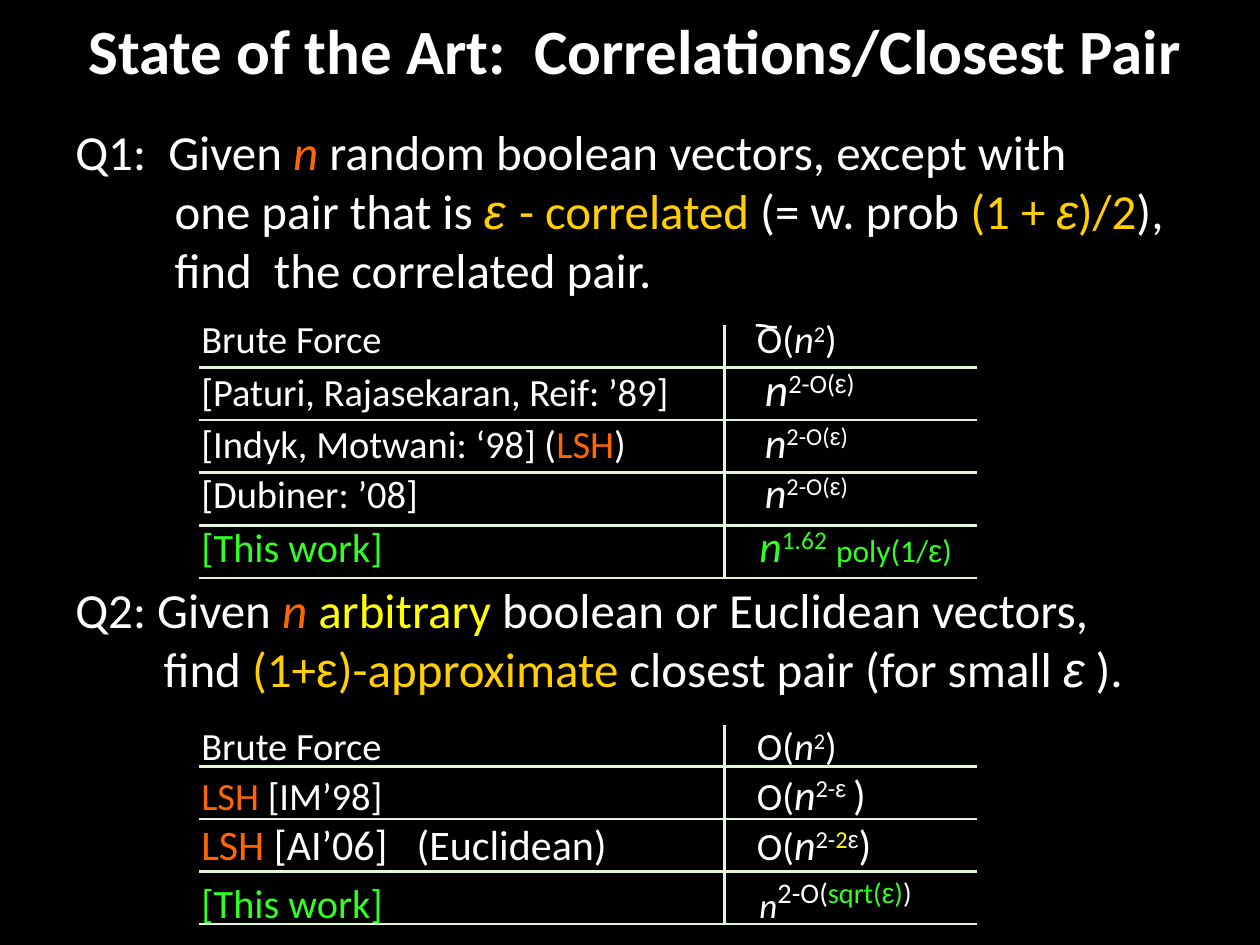
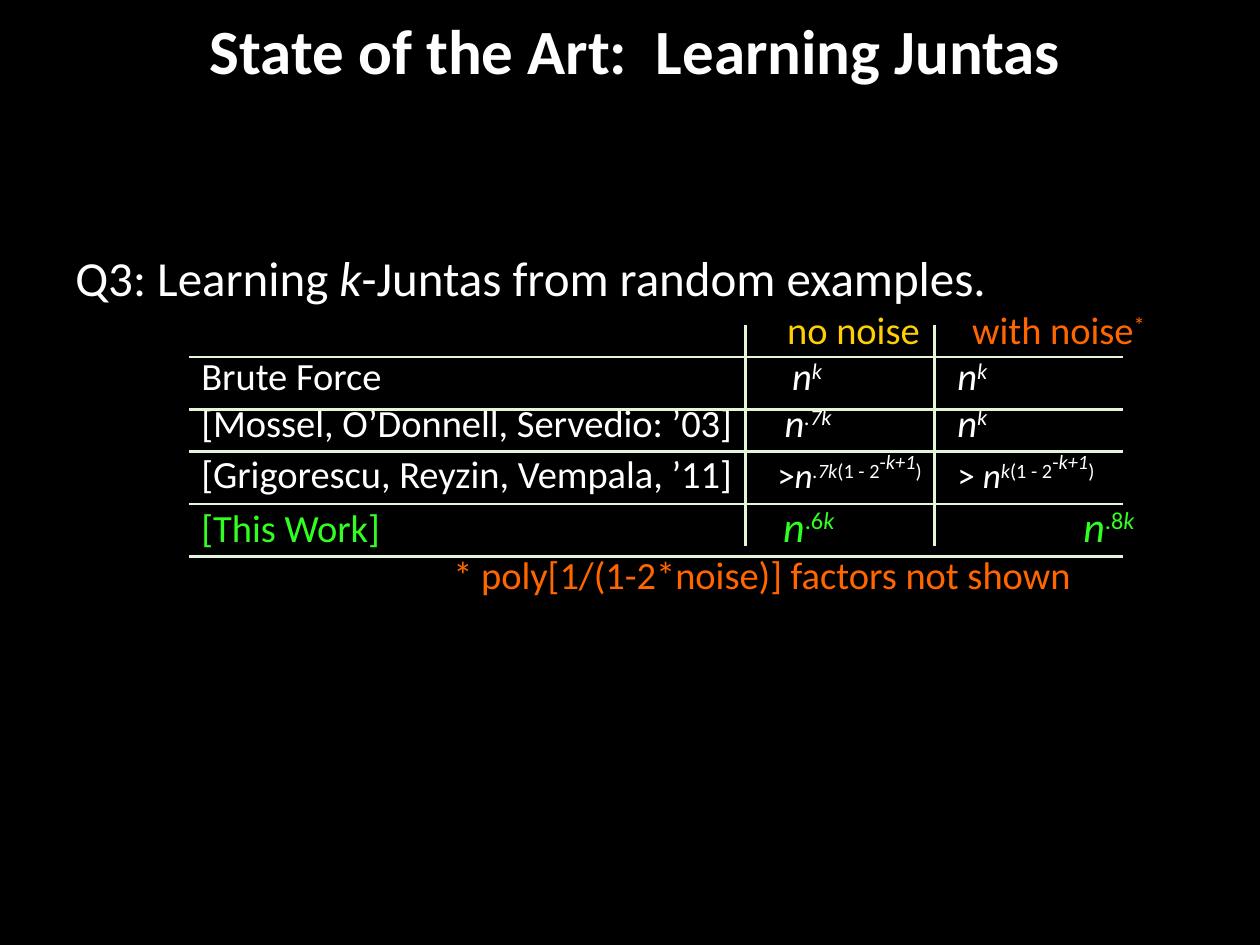
from dataclasses import dataclass, replace
from typing import NamedTuple

from lxml.etree import SubElement
from pptx import Presentation
from pptx.dml.color import RGBColor
from pptx.enum.shapes import MSO_CONNECTOR
from pptx.enum.text import MSO_AUTO_SIZE, PP_ALIGN
from pptx.oxml.ns import qn
from pptx.util import Cm, Pt

COLORS = {
    "background": "000000",
    "white": "FFFFFF",
    "orange": "FF6600",
    "gold": "FFCF03",
    "yellow": "FFFF00",
    "green": "31FF21",
    "rule": "E5F6D8",
}
BODY_FONT, GREEK_FONT = "Calibri", "Arial"
LABEL_TAB = 2.54
QUESTION_SIZE, ROW_SIZE = 28, 22


@dataclass(frozen=True)
class Run:
    text: str
    size: float = ROW_SIZE
    color: str = "white"
    italic: bool = False
    bold: bool = False
    font: str = BODY_FONT
    raised: int = 0  # superscript height in percent


@dataclass(frozen=True)
class Line:
    runs: list[Run]
    indent: float = 0
    space_before: float = 0
    tabs: tuple[float, ...] = ()
    centered: bool = False


class Box(NamedTuple):
    left: float
    top: float
    width: float
    height: float


class Cell(NamedTuple):
    tab: float
    runs: list[Run]


class Grid(NamedTuple):
    left: float
    right: float
    top: float
    bottom: float
    columns: list[float]
    rows: list[float]


TITLE_BOX = Box(0.64, 0.1, 24.33, 1.8)
BODY_LEFT, BODY_TOP, BODY_WIDTH = 1.27, 2.33, 23.5
ROW_STEP = 1.06


# Text pieces
def question(text: str, color: str = "white", italic: bool = False) -> Run:
    return Run(text, QUESTION_SIZE, color, italic)


def variable(text: str, size: float = ROW_SIZE, color: str = "white") -> Run:
    return Run(text, size, color, italic=True)


def power(text: str, size: float = ROW_SIZE, color: str = "white",
          italic: bool = False, raised: int = 30) -> Run:
    return Run(text, size, color, italic, raised=raised)


def greek(run: Run) -> Run:
    return replace(run, font=GREEK_FONT)


def power_of_two_minus(size: float) -> list[Run]:
    return [power("2-O(", size), greek(power("ε", size)), power(")", size)]


def junta_power(base: str, exponent: str) -> list[Run]:
    return [Run(base, 20), variable("n", 20), power(exponent, 20, italic=True),
            power("(1 - 2", 20), power("-", 20, raised=56),
            power("k+1", 20, italic=True, raised=56), power(")", 20)]


def table_row(label: list[Run], *cells: Cell, lead: float = ROW_SIZE,
              space_before: float = 0) -> Line:
    runs = [Run("\t", lead), *label]
    for cell in cells:
        runs += [Run("\t"), *cell.runs]
    tabs = (LABEL_TAB, *(cell.tab for cell in cells))
    return Line(runs, space_before=space_before, tabs=tabs)


# Drawing
def add_line(text_frame, line: Line, first: bool) -> None:
    paragraph = text_frame.paragraphs[0] if first else text_frame.add_paragraph()
    paragraph.alignment = PP_ALIGN.CENTER if line.centered else PP_ALIGN.LEFT
    paragraph.space_before = Pt(line.space_before)
    properties = paragraph._p.get_or_add_pPr()
    if line.indent:
        properties.set("marL", str(Cm(line.indent)))
    if line.tabs:
        tab_list = SubElement(properties, qn("a:tabLst"))
        for position in line.tabs:
            SubElement(tab_list, qn("a:tab"), pos=str(Cm(position)), algn="l")
    for piece in line.runs:
        run = paragraph.add_run()
        run.text = piece.text
        formats = {"name": piece.font, "size": Pt(piece.size),
                   "bold": piece.bold, "italic": piece.italic}
        for name, value in formats.items():
            setattr(run.font, name, value)
        run.font.color.rgb = RGBColor.from_string(COLORS[piece.color])
        if piece.raised:
            run._r.get_or_add_rPr().set("baseline", str(piece.raised * 1000))


def add_text(slide, box: Box, lines: list[Line], inset_top: float = 0.13) -> None:
    shape = slide.shapes.add_textbox(*(Cm(length) for length in box))
    formats = {"word_wrap": True, "auto_size": MSO_AUTO_SIZE.SHAPE_TO_FIT_TEXT,
               "margin_top": Cm(inset_top)}
    for name, value in formats.items():
        setattr(shape.text_frame, name, value)
    for index, line in enumerate(lines):
        add_line(shape.text_frame, line, index == 0)


def add_rule(slide, start: tuple[float, float], end: tuple[float, float],
             color: str = "rule", kind=MSO_CONNECTOR.STRAIGHT) -> None:
    points = (Cm(length) for length in (*start, *end))
    connector = slide.shapes.add_connector(kind, *points)
    connector.line.width = Pt(1.5)
    connector.line.color.rgb = RGBColor.from_string(COLORS[color])
    SubElement(connector._element.spPr, qn("a:effectLst"))


def add_grid(slide, grid: Grid) -> None:
    for x in grid.columns:
        add_rule(slide, (x, grid.top), (x, grid.bottom))
    for y in grid.rows:
        add_rule(slide, (grid.left, y), (grid.right, y))


def add_titled_slide(presentation, title: str):
    slide = presentation.slides.add_slide(presentation.slide_layouts[6])
    slide.background.fill.solid()
    slide.background.fill.fore_color.rgb = RGBColor.from_string(COLORS["background"])
    add_text(slide, TITLE_BOX, [Line([Run(title, 36, bold=True)], centered=True)])
    return slide


# Slide 1: closest pair
def build_closest_pair(presentation) -> None:
    slide = add_titled_slide(presentation, "State of the Art:  Correlations/Closest Pair")
    epsilon = greek(question("ε", "gold", italic=True))
    big_o, plain_n = 13.74, 13.9
    quadratic = Cell(big_o, [Run("O("), variable("n"), power("2"), Run(")")])
    lines = [
        Line([question("Q1:  Given "), question("n", "orange", True),
              question(" random boolean vectors, except with")]),
        Line([question("one pair that is "), replace(epsilon, text="ε "),
              question("- correlated", "gold"), question(" (= w. prob "),
              question("(1 + ", "gold"), epsilon, question(")/2", "gold"),
              question("),")], indent=2.0),
        Line([question("find  the correlated pair.")], indent=2.0),
        # First table
        table_row([Run("Brute Force")], quadratic, space_before=9.6),
        table_row([Run("[Paturi, Rajasekaran, Reif: ’89]")],
                  Cell(plain_n, [variable("n", 26), *power_of_two_minus(26)])),
        table_row([Run("[Indyk, Motwani: ‘98] ("), Run("LSH", color="orange"), Run(")")],
                  Cell(plain_n, [variable("n", 24), *power_of_two_minus(24)])),
        table_row([Run("[Dubiner: ’08]")],
                  Cell(plain_n, [variable("n", 24), *power_of_two_minus(24)])),
        table_row([Run("[This work]", 23, "green")],
                  Cell(13.79, [variable("n", 25, "green"), power("1.62", 25, "green"),
                               Run(" ", 23), Run("poly(1/", 18, "green"),
                               greek(Run("ε", 18, "green")), Run(")", 18, "green")]),
                  lead=26),
        Line([question("Q2: Given "), question("n ", "orange", True),
              question("arbitrary ", "yellow"),
              question("boolean or Euclidean vectors,")], space_before=4.8),
        Line([question("find "), question("(1+", "gold"), greek(question("ε", "gold")),
              question(")-approximate ", "gold"),
              question("closest pair (for small "),
              greek(question("ε", italic=True)), question(" ).")], indent=1.78),
        # Second table
        table_row([Run("Brute Force")], quadratic, space_before=14.2),
        table_row([Run("LSH", color="orange"), Run(" [IM’98]")],
                  Cell(big_o, [Run("O("), variable("n", 24), power("2-", 24),
                               greek(power("ε ", 24)), Run(")", 24)])),
        table_row([Run("LSH ", 24, "orange"), Run("[AI’06]", 24)],
                  Cell(6.88, [Run("(Euclidean)", 24)]),
                  Cell(big_o, [Run("O("), variable("n", 24), power("2-", 24),
                               power("2", 24, "yellow"), greek(power("ε", 24)),
                               Run(")", 24)]), lead=24),
        table_row([Run("[This work]", 23, "green")],
                  Cell(13.79, [variable("n", 20), power("2-O(", 28),
                               power("sqrt(", 28, "green"),
                               greek(power("ε", 28, "green")),
                               power(")", 28, "green"), power(")", 28)]), lead=26),
    ]
    add_text(slide, Box(BODY_LEFT, BODY_TOP, BODY_WIDTH, 17.83), lines)
    for top, bottom, first_row, count in ((6.56, 11.64, 7.41, 5), (14.61, 18.63, 15.45, 4)):
        rows = [first_row + index * ROW_STEP for index in range(count)]
        add_grid(slide, Grid(4.02, 19.69, top, bottom, [14.61], rows))
    # Tilde over the first O
    add_rule(slide, (15.24, 6.56), (15.66, 6.6), "white", MSO_CONNECTOR.CURVE)


# Slide 2: juntas
def build_juntas(presentation) -> None:
    slide = add_titled_slide(presentation, "State of the Art:  Learning Juntas")
    noisy = 17.78
    brute_power = [variable("n"), power("k", italic=True)]

    def best_power(exponent: str) -> list[Run]:
        return [variable("n", 24, "green"), power(exponent, 24, "green"),
                power("k", 24, "green", italic=True)]

    lines = [
        Line([question("Q3: Learning "), question("k", italic=True),
              question("-Juntas from random examples.")]),
        table_row([], Cell(14.35, [Run("no noise", color="gold")]),
                  Cell(18.08, [Run("with noise", color="orange"),
                               power("*", color="orange")])),
        table_row([Run("Brute Force")], Cell(14.45, brute_power), Cell(noisy, brute_power)),
        table_row([Run("[Mossel, O’Donnell, Servedio: ’03]")],
                  Cell(14.3, [variable("n"), power(".7k", italic=True)]),
                  Cell(noisy, brute_power)),
        table_row([Run("[Grigorescu, Reyzin, Vempala, ’11]")],
                  Cell(14.15, junta_power(">", ".7k")),
                  Cell(noisy, junta_power("> ", "k")), space_before=2.4),
        table_row([Run("[This Work]", color="green")], Cell(14.27, best_power(".6")),
                  Cell(20.32, best_power(".8")), lead=26),
        Line([Run("* poly[1/(1-2*noise)] factors not shown", color="orange")], indent=7.62),
    ]
    add_text(slide, Box(BODY_LEFT, BODY_TOP, BODY_WIDTH, 10.08), lines, inset_top=2.66)
    add_grid(slide, Grid(3.81, 22.64, 6.56, 11.01, [15.03, 18.84],
                         [7.2, 8.26, 9.1, 10.16, 11.22]))


def main() -> None:
    presentation = Presentation()
    presentation.slide_width, presentation.slide_height = Cm(25.4), Cm(19.05)
    build_closest_pair(presentation)
    build_juntas(presentation)
    presentation.save("out.pptx")


if __name__ == "__main__":
    main()
